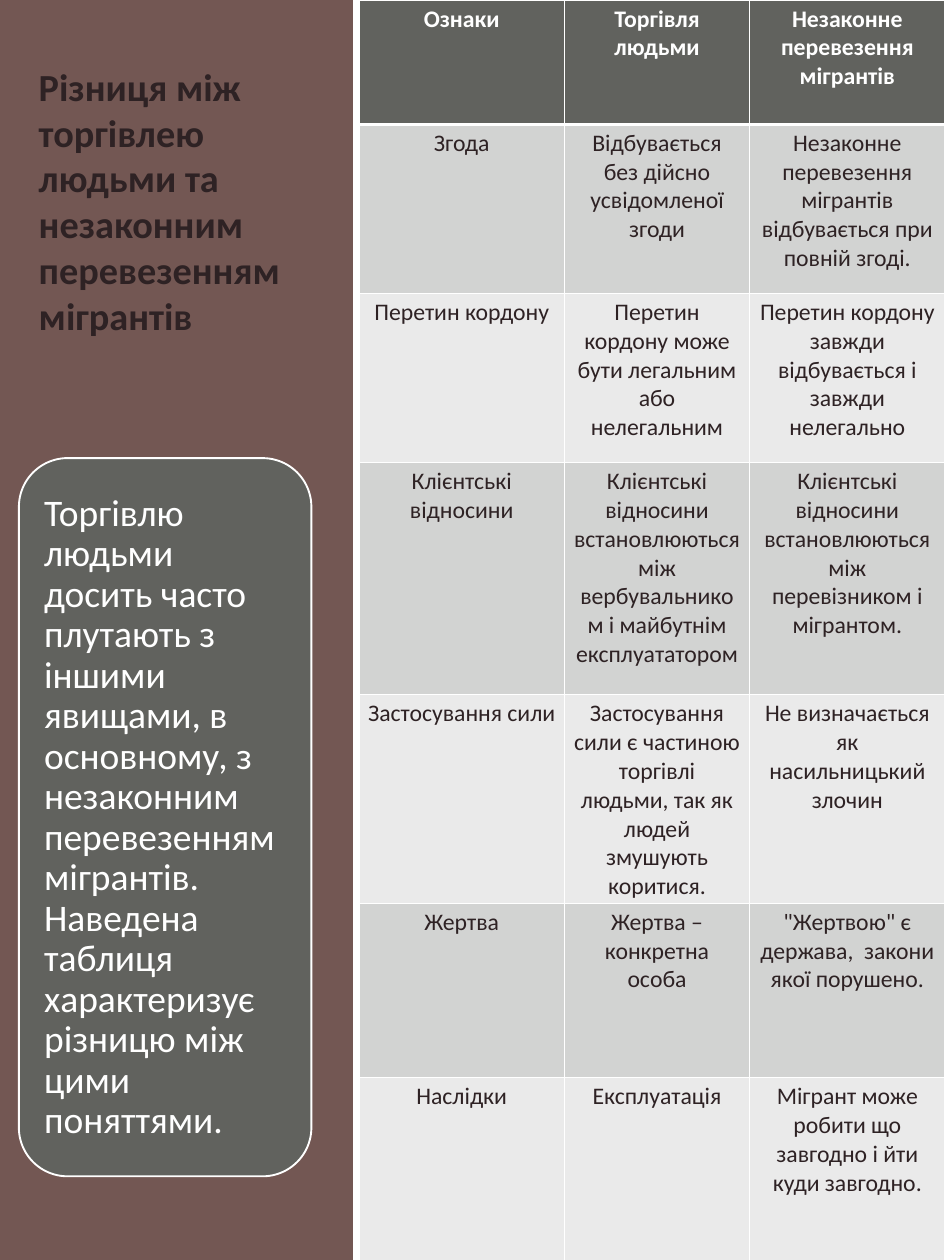
from lxml import etree
from pptx import Presentation
from pptx import util as u
from pptx.dml.color import RGBColor
from pptx.enum import shapes, text
from pptx.oxml import ns

BROWN = RGBColor(0x48, 0x23, 0x1E)
INK = RGBColor(0x2E, 0x22, 0x24)
GRAY = RGBColor(0x61, 0x62, 0x5E)
BAND_DARK = RGBColor(0xD2, 0xD3, 0xD2)
BAND_LIGHT = RGBColor(0xEA, 0xEA, 0xEA)
WHITE = RGBColor(0xFF, 0xFF, 0xFF)

TITLE = "Різниця між торгівлею людьми та незаконним перевезенням мігрантів"
NOTE = ("Торгівлю людьми досить часто плутають з іншими явищами, в основному, "
        "з незаконним перевезенням мігрантів. Наведена таблиця характеризує "
        "різницю між цими поняттями.")
COL_WIDTHS = [2.28, 2.06, 2.17]
ROW_HEIGHTS = [1.38, 1.88, 1.88, 2.58, 2.23, 1.94, 2.12]
ROWS = [
    ["Ознаки", "Торгівля людьми", "Незаконне перевезення мігрантів"],
    ["Згода", "Відбувається без дійсно усвідомленої згоди",
     "Незаконне перевезення мігрантів відбувається при повній згоді."],
    ["Перетин кордону", "Перетин кордону може бути легальним або нелегальним",
     "Перетин кордону завжди відбувається і завжди нелегально"],
    ["Клієнтські відносини",
     "Клієнтські відносини встановлюються між вербувальником і майбутнім експлуататором",
     "Клієнтські відносини встановлюються між перевізником і мігрантом."],
    ["Застосування сили",
     "Застосування сили є частиною торгівлі людьми, так як людей змушують коритися.",
     "Не визначається як насильницький злочин"],
    ["Жертва", "Жертва – конкретна особа",
     "\"Жертвою\" є держава,  закони якої порушено."],
    ["Наслідки", "Експлуатація",
     "Мігрант може робити що завгодно і йти куди завгодно."],
]


class SlideBuilder:
    def __init__(self, slide, font="Calibri"):
        self.s = slide
        self.font = font

    def style(self, p, size, color, bold=False):
        for r in p.runs:
            r.font.name, r.font.size, r.font.bold = self.font, u.Pt(size), bold
            r.font.color.rgb = color

    def shape(self, kind, box, fill, line=None, alpha=None):
        """Add a filled shape; alpha is opacity in percent."""
        sp = self.s.shapes.add_shape(kind, *map(u.Inches, box))
        sp.shadow.inherit = False
        sp.fill.solid()
        sp.fill.fore_color.rgb = fill
        if alpha is not None:
            clr = sp._element.spPr.find(".//" + ns.qn("a:srgbClr"))
            etree.SubElement(clr, ns.qn("a:alpha"), val=str(alpha * 1000))
        if line is None:
            sp.line.fill.background()
        else:
            sp.line.color.rgb = line
            sp.line.width = u.Pt(1.5)

    def text(self, box, words, size, color, anchor, margins, bold=False, spacing=None):
        """Add a wrapped text box; margins are (horizontal, vertical)."""
        tf = self.s.shapes.add_textbox(*map(u.Inches, box)).text_frame
        tf.word_wrap = True
        tf.vertical_anchor = anchor
        tf.margin_left = tf.margin_right = u.Inches(margins[0])
        tf.margin_top = tf.margin_bottom = u.Inches(margins[1])
        tf.text = words
        p = tf.paragraphs[0]
        p.line_spacing = spacing
        self.style(p, size, color, bold)

    def borders(self, cell, **widths):
        """Draw white borders; widths in points by side: L, R, T, B."""
        tc_pr = cell._tc.get_or_add_tcPr()
        for side, width in widths.items():
            ln = etree.SubElement(tc_pr, ns.qn("a:ln" + side), w=str(u.Pt(width)))
            fill = etree.SubElement(ln, ns.qn("a:solidFill"))
            etree.SubElement(fill, ns.qn("a:srgbClr"), val=str(WHITE))

    def table(self, left, top, rows, widths, heights, size):
        box = map(u.Inches, (left, top, sum(widths), sum(heights)))
        table = self.s.shapes.add_table(len(rows), len(widths), *box).table
        for col, width in zip(table.columns, widths):
            col.width = u.Inches(width)
        for i, (row, height) in enumerate(zip(table.rows, heights)):
            row.height = u.Inches(height)
            header = i == 0
            fill = GRAY if header else BAND_DARK if i % 2 else BAND_LIGHT
            for cell, words in zip(row.cells, rows[i]):
                self.borders(cell, L=1, R=1, T=3 if i == 1 else 1, B=3 if header else 1)
                cell.fill.solid()
                cell.fill.fore_color.rgb = fill
                cell.text_frame.text = words
                p = cell.text_frame.paragraphs[0]
                p.alignment = text.PP_ALIGN.CENTER
                self.style(p, size, WHITE if header else INK, header)


def main():
    prs = Presentation()
    prs.slide_width, prs.slide_height = u.Inches(10.5), u.Inches(14)
    b = SlideBuilder(prs.slides.add_slide(prs.slide_layouts[6]))
    kinds, anchors = shapes.MSO_SHAPE, text.MSO_ANCHOR

    b.shape(kinds.RECTANGLE, (0, 0, 3.92, 14), BROWN, alpha=76)
    b.text((0.29, 0.31, 3.25, 3.52), TITLE, 30.6, INK, anchors.BOTTOM,
           (0.14, 0.07), bold=True)
    b.table(3.99, 0, ROWS, COL_WIDTHS, ROW_HEIGHTS, 19)
    b.shape(kinds.ROUNDED_RECTANGLE, (0.21, 5.09, 3.25, 7.98), GRAY, line=WHITE)
    b.text((0.37, 5.25, 2.94, 7.67), NOTE, 30, WHITE, anchors.MIDDLE,
           (0.12, 0.12), spacing=0.9)
    prs.save("out.pptx")


if __name__ == "__main__":
    main()
